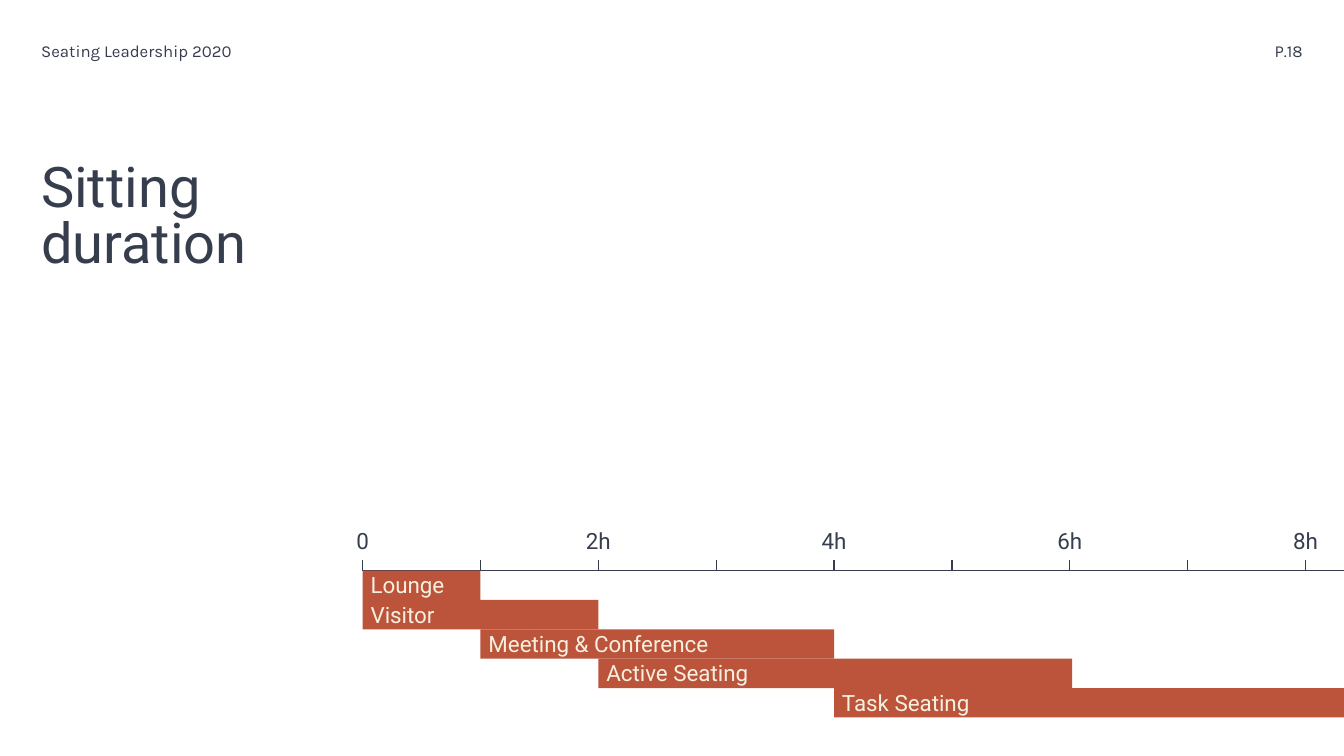
from pptx import Presentation
from pptx.dml.color import RGBColor
from pptx.enum.shapes import MSO_CONNECTOR as Connector, MSO_SHAPE as Shape
from pptx.enum.text import MSO_ANCHOR as Anchor, PP_ALIGN as Align
from pptx.oxml.xmlchemy import OxmlElement
from pptx.util import Cm, Pt

INK = "363D4D"
RUST = "BC543B"
CREAM = "F5F0DF"

SLIDE_WIDTH = 33.87
SLIDE_HEIGHT = 19.05
MARGIN = 1.04
AXIS_LEFT = 9.14
AXIS_TOP = 14.38
HOUR = 2.97
TICK = 0.28
ROW = 0.74
LABEL_WIDTH = 1.17
LABEL_TOP = 13.16

SEATS = [
    ("Lounge", 0, 1),
    ("Visitor", 0, 2),
    ("Meeting & Conference", 1, 4),
    ("Active Seating", 2, 6.02),
    ("Task Seating", 4, 8.33),
]


def color(value):
    return RGBColor.from_string(value)


def hour_left(hour):
    return AXIS_LEFT + hour * HOUR


def write(shape, text, size, font, ink, align=Align.LEFT, spacing=None,
          anchor=Anchor.TOP, insets=(0, 0, 0, 0)):
    frame = shape.text_frame
    frame.text = text
    frame.word_wrap = True
    frame.vertical_anchor = anchor
    (frame.margin_left, frame.margin_top,
     frame.margin_right, frame.margin_bottom) = map(Cm, insets)
    para = frame.paragraphs[0]
    para.alignment = align
    para.line_spacing = spacing
    span = para.runs[0]
    span.font.size = Pt(size)
    span.font.name = font
    span.font.color.rgb = color(ink)


def add_text(page, left, top, width, height, text, size, font, **style):
    box = page.shapes.add_textbox(Cm(left), Cm(top), Cm(width), Cm(height))
    write(box, text, size, font, INK, **style)


def add_line(page, left, top, right, bottom):
    line = page.shapes.add_connector(
        Connector.STRAIGHT, Cm(left), Cm(top), Cm(right), Cm(bottom))
    line.line.color.rgb = color(INK)
    line.line.width = Pt(1)
    line._element.spPr.append(OxmlElement("a:effectLst"))


def add_axis(page):
    add_line(page, AXIS_LEFT, AXIS_TOP, SLIDE_WIDTH, AXIS_TOP)
    for hour in range(9):
        left = hour_left(hour)
        add_line(page, left, AXIS_TOP - TICK, left, AXIS_TOP)
        if hour % 2 == 0:
            add_text(page, left - LABEL_WIDTH / 2, LABEL_TOP, LABEL_WIDTH, 0.94,
                     f"{hour}h" if hour else "0", 16, "Roboto",
                     align=Align.CENTER, insets=(0, 0.13, 0, 0.13))


def add_bar(page, row, name, start, end):
    bar = page.shapes.add_shape(
        Shape.RECTANGLE, Cm(hour_left(start)), Cm(AXIS_TOP + row * ROW),
        Cm((end - start) * HOUR), Cm(ROW))
    bar.shadow.inherit = False
    bar.fill.solid()
    bar.fill.fore_color.rgb = color(RUST)
    bar.line.fill.background()
    write(bar, name, 16, "Roboto", CREAM, spacing=0.8,
          anchor=Anchor.MIDDLE, insets=(0.2, 0.15, 0.2, 0.05))


def main():
    deck = Presentation()
    deck.slide_width = Cm(SLIDE_WIDTH)
    deck.slide_height = Cm(SLIDE_HEIGHT)
    page = deck.slides.add_slide(deck.slide_layouts[6])
    add_text(page, MARGIN, 1.02, 10.11, 1.02,
             "Seating Leadership 2020", 12, "Karla")
    add_text(page, SLIDE_WIDTH - MARGIN - 7.62, 1.02, 7.62, 1.02,
             "P.18", 12, "Karla", align=Align.RIGHT)
    add_text(page, MARGIN, 4.11, 7.54, 2.49,
             "Sitting duration", 40, "Roboto", spacing=Pt(40))
    add_axis(page)
    for row, (name, start, end) in enumerate(SEATS):
        add_bar(page, row, name, start, end)
    deck.save("out.pptx")


if __name__ == "__main__":
    main()
